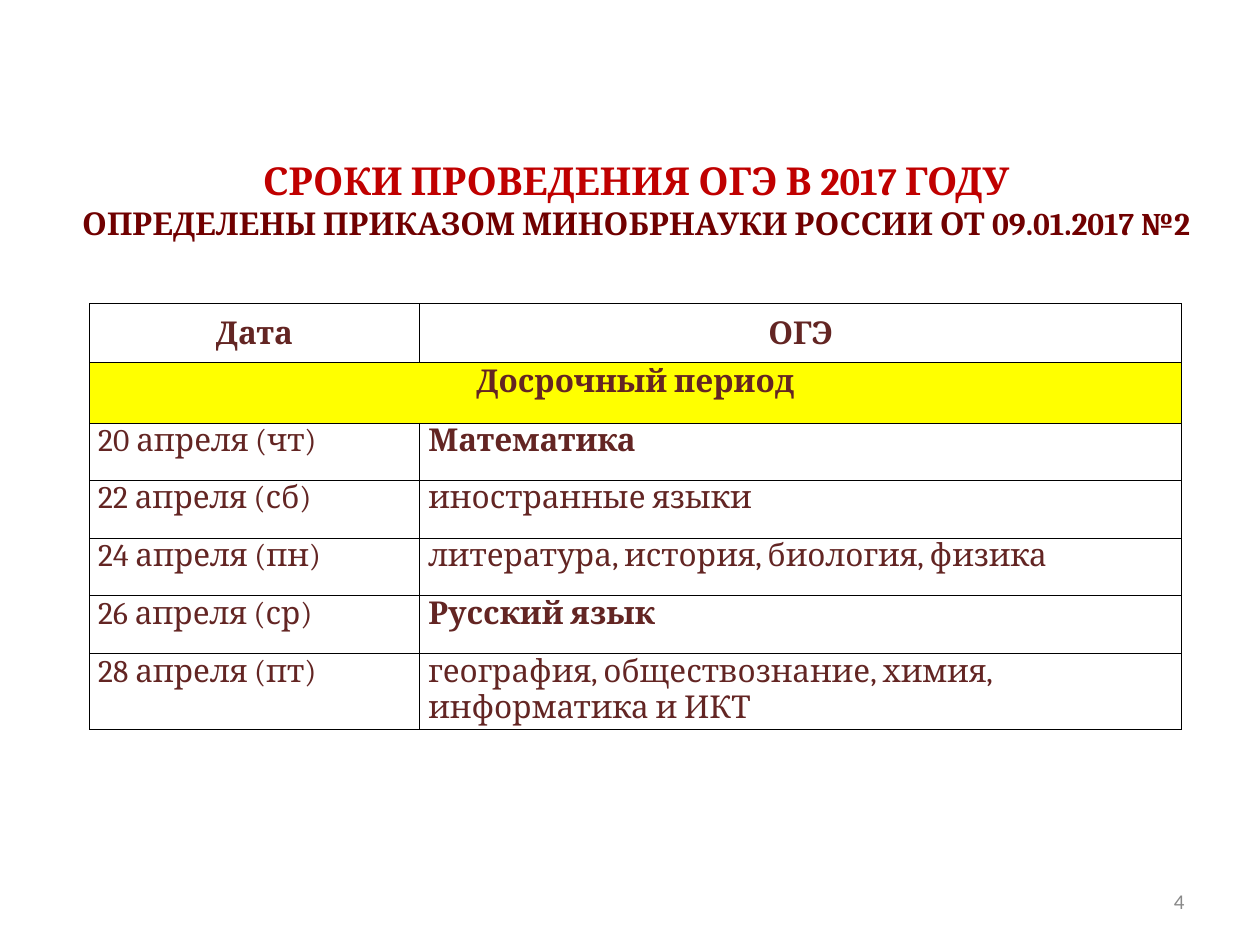
from lxml.etree import SubElement
from pptx import Presentation
from pptx.dml.color import RGBColor
from pptx.enum.text import MSO_ANCHOR as Anchor, PP_ALIGN as Align
from pptx.oxml.ns import qn
from pptx.util import Inches, Pt

TITLE = "СРОКИ ПРОВЕДЕНИЯ ОГЭ В 2017 ГОДУ"
ORDER = "ОПРЕДЕЛЕНЫ ПРИКАЗОМ МИНОБРНАУКИ РОССИИ ОТ 09.01.2017 №2"
HEADER = ("Дата", "ОГЭ")
PERIOD = "Досрочный период"
EXAMS = [
    ("20 апреля (чт)", "Математика"),
    ("22 апреля (сб)", "иностранные языки"),
    ("24 апреля (пн)", "литература, история, биология, физика"),
    ("26 апреля (ср)", "Русский язык"),
    ("28 апреля (пт)", "география, обществознание, химия, информатика и ИКТ"),
]
MANDATORY = {"Математика", "Русский язык"}
PAGE = "4"

COLUMN_WIDTHS = (2.62, 6.05)
ROW_HEIGHTS = (0.47, 0.48, 0.45, 0.46, 0.46, 0.46, 0.6)
BROWN = "632523"


def color(code):
    return RGBColor.from_string(code)


def write(paragraph, text, size=18, font="Cambria", ink=BROWN, bold=False, align=Align.LEFT):
    paragraph.alignment = align
    run = paragraph.add_run()
    run.text = text
    run.font.size = Pt(size)
    run.font.name = font
    run.font.bold = bold
    run.font.color.rgb = color(ink)


def place(shape, left, top, width, height):
    shape.left, shape.top = Inches(left), Inches(top)
    shape.width, shape.height = Inches(width), Inches(height)


def set_margins(box, sides, top=0, bottom=0):
    box.margin_left = box.margin_right = Inches(sides)
    box.margin_top, box.margin_bottom = Inches(top), Inches(bottom)


def draw_borders(cell):
    properties = cell._tc.get_or_add_tcPr()
    for side in ("lnL", "lnR", "lnT", "lnB"):
        line = SubElement(properties, qn(f"a:{side}"), w=str(Pt(0.5)))
        SubElement(SubElement(line, qn("a:solidFill")), qn("a:srgbClr"), val="000000")


def add_title(slide):
    title = slide.shapes.title
    place(title, 0.55, 1.19, 9, 1.07)
    frame = title.text_frame
    frame.word_wrap = True
    frame.vertical_anchor = Anchor.TOP
    set_margins(frame, 0.05, top=0.06)
    heading = frame.paragraphs[0]
    write(heading, TITLE, size=22, ink="C00000", bold=True, align=Align.CENTER)
    heading.add_line_break()
    write(heading, ORDER, ink="700000", bold=True, align=Align.CENTER)


def add_schedule(slide):
    rows = [HEADER, (PERIOD, ""), *EXAMS]
    schedule = slide.shapes.add_table(
        len(rows), len(HEADER), Inches(0.71), Inches(2.41),
        Inches(sum(COLUMN_WIDTHS)), Inches(sum(ROW_HEIGHTS))).table
    schedule.first_row = schedule.horz_banding = False
    for column, width in zip(schedule.columns, COLUMN_WIDTHS):
        column.width = Inches(width)
    for row, height in zip(schedule.rows, ROW_HEIGHTS):
        row.height = Inches(height)
    schedule.cell(1, 0).merge(schedule.cell(1, 1))

    for r, texts in enumerate(rows):
        heading = r < 2
        for c, text in enumerate(texts):
            cell = schedule.cell(r, c)
            draw_borders(cell)
            if r == 1:
                cell.fill.solid()
                cell.fill.fore_color.rgb = color("FFFF00")
            else:
                cell.fill.background()
            cell.vertical_anchor = Anchor.MIDDLE if r == 0 else Anchor.TOP
            set_margins(cell, 0.01 if heading else 0.07, top=0.01 if heading else 0)
            if text:
                write(cell.text_frame.paragraphs[0], text,
                      bold=heading or text in MANDATORY,
                      align=Align.CENTER if heading else Align.LEFT)


def add_page_number(slide):
    box = slide.shapes.add_textbox(Inches(7.17), Inches(6.95), Inches(2.33), Inches(0.4))
    frame = box.text_frame
    frame.word_wrap = True
    frame.vertical_anchor = Anchor.MIDDLE
    write(frame.paragraphs[0], PAGE, size=12, font="Calibri", ink="898989", align=Align.RIGHT)


def main():
    deck = Presentation()
    deck.slide_width, deck.slide_height = Inches(10), Inches(7.5)
    slide = deck.slides.add_slide(deck.slide_layouts[5])
    add_title(slide)
    add_schedule(slide)
    add_page_number(slide)
    deck.save("out.pptx")


if __name__ == "__main__":
    main()
